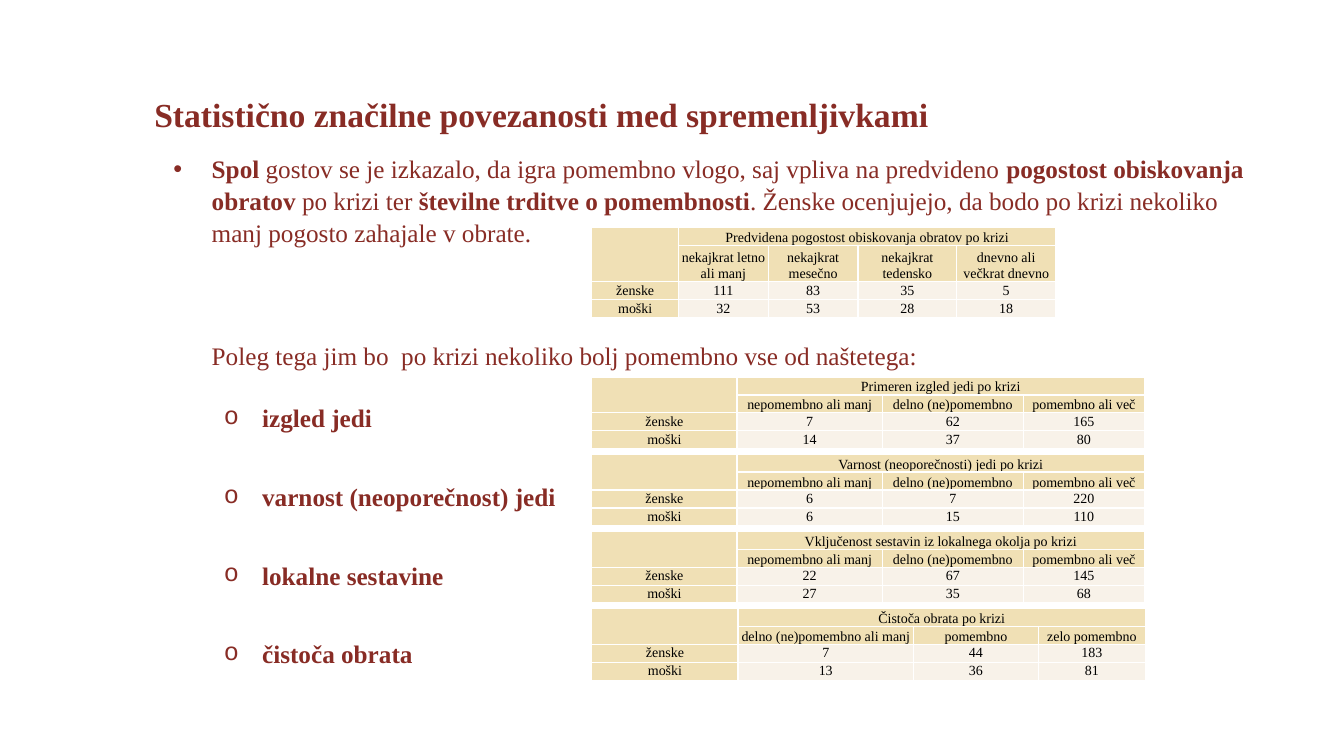
"""Build the slide on links between gender, visits and what guests find important."""
from lxml.etree import SubElement
from pptx import Presentation
from pptx.dml.color import RGBColor
from pptx.enum.text import MSO_ANCHOR, MSO_AUTO_SIZE, PP_ALIGN
from pptx.oxml.ns import qn
from pptx.util import Inches, Pt

COLORS = {"text": "882C25", "cell": "000000", "head": "F0E0B5", "value": "F8F2E9", "border": "FFFFFF"}
FONT = "Times New Roman"
ROW = 0.178
TABLE_LEFT = 5.87
FIRST_RATING_TOP = 3.74
RATING_PITCH = 4.3 * ROW
RATING_HEADS = ["nepomembno ali manj", "delno (ne)pomembno", "pomembno ali več"]
RATING_WIDTHS = [1.44, 1.44, 1.4, 1.2]

visits = ("Predvidena pogostost obiskovanja obratov po krizi",
          ["nekajkrat letno ali manj", "nekajkrat mesečno", "nekajkrat tedensko", "dnevno ali večkrat dnevno"],
          [111, 83, 35, 5], [32, 53, 28, 18], [0.86, 0.89, 0.89, 0.98, 0.98])
ratings = [
    ("Primeren izgled jedi po krizi", RATING_HEADS, [7, 62, 165], [14, 37, 80], RATING_WIDTHS),
    ("Varnost (neoporečnosti) jedi po krizi", RATING_HEADS, [6, 7, 220], [6, 15, 110], RATING_WIDTHS),
    ("Vključenost sestavin iz lokalnega okolja po krizi", RATING_HEADS,
     [22, 67, 145], [27, 35, 68], RATING_WIDTHS),
    ("Čistoča obrata po krizi", ["delno (ne)pomembno ali manj", "pomembno", "zelo pomembno"],
     [7, 44, 183], [13, 36, 81], [1.45, 1.74, 1.24, 1.06]),
]
intro = [
    ("Spol", True),
    (" gostov se je izkazalo, da igra pomembno vlogo, saj vpliva na predvideno ", False),
    ("pogostost obiskovanja obratov", True),
    (" po krizi ter ", False),
    ("številne trditve o pomembnosti", True),
    (". Ženske ocenjujejo, da bodo po krizi nekoliko manj pogosto zahajale v obrate.", False),
]
paragraphs = [
    (intro, "•", "Arial", 0.38, 0),
    ([("Poleg tega jim bo  po krizi nekoliko bolj pomembno vse od naštetega:", False)], None, None, 0.38, 65.4),
    ([("izgled jedi", True)], "o", "Courier New", 0.88, 21.8),
    ([("varnost (neoporečnost) jedi", True)], "o", "Courier New", 0.88, 33.5),
    ([("lokalne sestavine", True)], "o", "Courier New", 0.88, 33.5),
    ([("čistoča obrata", True)], "o", "Courier New", 0.88, 33.5),
]


def style(font, size, color):
    font.name = FONT
    font.size = Pt(size)
    font.color.rgb = RGBColor.from_string(COLORS[color])


prs = Presentation()
prs.slide_width, prs.slide_height = Inches(13.33), Inches(7.5)
slide = prs.slides.add_slide(prs.slide_layouts[1])
heading, findings = slide.placeholders

heading.left, heading.top, heading.width, heading.height = map(Inches, (1.43, 0.88, 8.13, 0.5))
heading.text_frame.text = "Statistično značilne povezanosti med spremenljivkami"
heading.text_frame.word_wrap = False
heading.text_frame.paragraphs[0].alignment = PP_ALIGN.LEFT
heading.text_frame.paragraphs[0].font.bold = True
style(heading.text_frame.paragraphs[0].font, 24, "text")

findings.left, findings.top, findings.width, findings.height = map(Inches, (1.62, 1.46, 10.92, 5.45))
for box in (heading, findings):
    box.text_frame.auto_size = MSO_AUTO_SIZE.NONE
    box.text_frame.vertical_anchor = MSO_ANCHOR.TOP

for index, (runs, bullet, bullet_font, indent, gap) in enumerate(paragraphs):
    paragraph = findings.text_frame.paragraphs[0] if index == 0 else findings.text_frame.add_paragraph()
    paragraph.level = 1 if bullet == "o" else 0
    paragraph.line_spacing = 1.05
    paragraph.space_before = Pt(gap)
    properties = paragraph._p.get_or_add_pPr()
    properties.set("marL", str(Inches(indent)))
    properties.set("indent", str(Inches(-0.38) if bullet else 0))
    if bullet:
        SubElement(properties, qn("a:buFont"), typeface=bullet_font)
        SubElement(properties, qn("a:buChar"), char=bullet)
    else:
        SubElement(properties, qn("a:buNone"))
    style(paragraph.font, 18, "text")
    for text, bold in runs:
        run = paragraph.add_run()
        run.text = text
        run.font.bold = bold

tops = [2.26] + [FIRST_RATING_TOP + i * RATING_PITCH for i in range(len(ratings))]
for top, (caption, heads, women, men, widths) in zip(tops, [visits] + ratings):
    rows = [["", caption] + [""] * (len(heads) - 1), [""] + heads, ["ženske"] + women, ["moški"] + men]
    heights = [ROW, ROW * (2 if heads is visits[1] else 1), ROW, ROW]
    table = slide.shapes.add_table(len(rows), len(widths), Inches(TABLE_LEFT), Inches(top),
                                   Inches(sum(widths)), Inches(sum(heights))).table
    table.first_row = table.horz_banding = False
    for column, width in zip(table.columns, widths):
        column.width = Inches(width)
    for r, values in enumerate(rows):
        table.rows[r].height = Inches(heights[r])
        for c, value in enumerate(values):
            cell = table.cell(r, c)
            cell.margin_left = cell.margin_right = cell.margin_top = cell.margin_bottom = 0
            cell.vertical_anchor = MSO_ANCHOR.BOTTOM if r < 2 else MSO_ANCHOR.TOP
            for side in ("lnL", "lnR", "lnT", "lnB"):
                line = SubElement(cell._tc.get_or_add_tcPr(), qn(f"a:{side}"), w=str(Pt(1)))
                SubElement(SubElement(line, qn("a:solidFill")), qn("a:srgbClr"), val=COLORS["border"])
            cell.fill.solid()
            cell.fill.fore_color.rgb = RGBColor.from_string(COLORS["head" if r < 2 or c == 0 else "value"])
            paragraph = cell.text_frame.paragraphs[0]
            paragraph.alignment = PP_ALIGN.CENTER
            paragraph.line_spacing = 1.07
            style(paragraph.font, 10, "cell")
            if value == "":
                SubElement(paragraph._p, qn("a:endParaRPr"), sz="1000")
            else:
                paragraph.add_run().text = str(value)
    table.cell(0, 0).merge(table.cell(1, 0))
    table.cell(0, 1).merge(table.cell(0, len(heads)))

prs.save("out.pptx")
